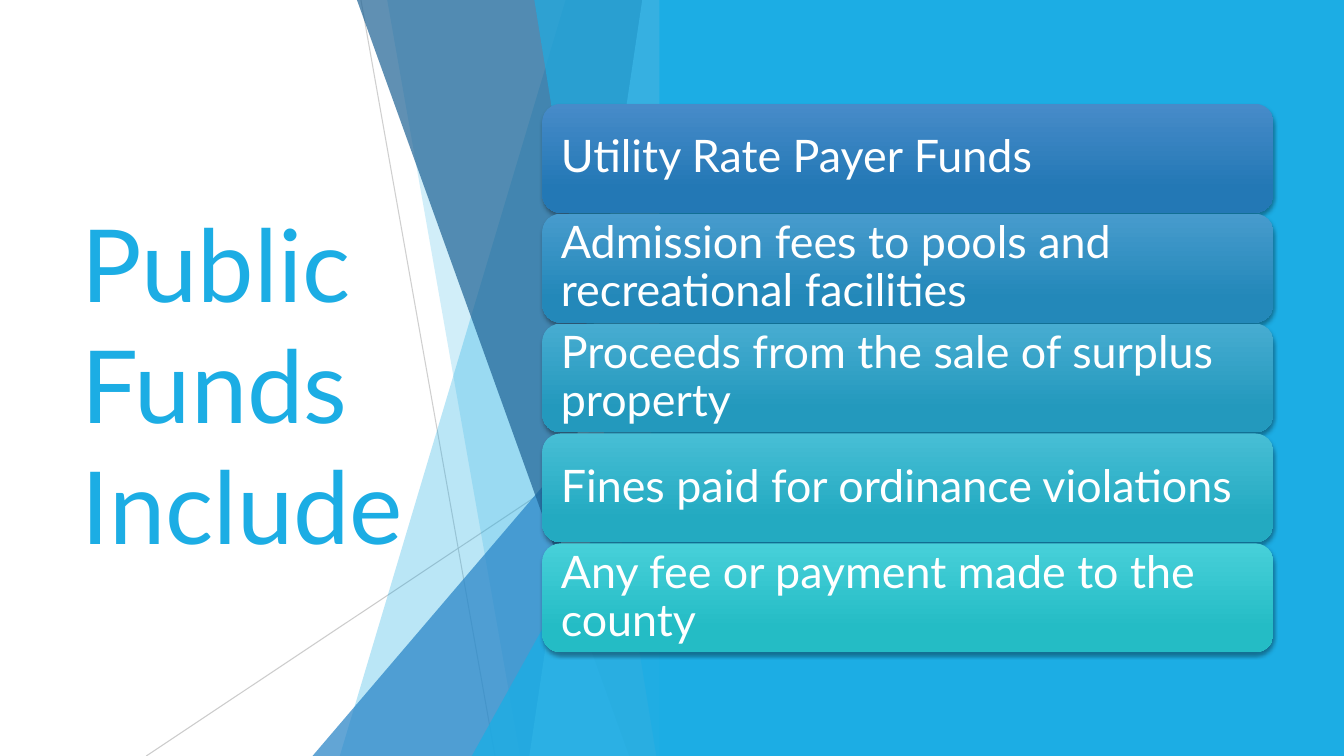
"""Build the "Public Funds Include" slide: a title, faceted divider and five cards."""
import pptx
import pptx.util
import pptx.dml.color
import pptx.enum.shapes
import pptx.enum.text
import pptx.oxml.ns
from lxml import etree

Inches = pptx.util.Inches
Pt = pptx.util.Pt
RGBColor = pptx.dml.color.RGBColor
SHAPE = pptx.enum.shapes.MSO_SHAPE
qn = pptx.oxml.ns.qn

SKY = RGBColor(0x1C, 0xAD, 0xE4)
BLUE = RGBColor(0x26, 0x83, 0xC6)
NAVY = RGBColor(0x1D, 0x62, 0x94)
PALE = RGBColor(0x77, 0xCE, 0xEF)
SILVER = RGBColor(0xBF, 0xBF, 0xBF)
WHITE = RGBColor(0xFF, 0xFF, 0xFF)

WIDTH, HEIGHT = 13.33, 7.5
FACET_RIGHT = 6.66
PANEL_LEFT = 6.54
CARD_LEFT, CARD_TOP, CARD_WIDTH, CARD_HEIGHT = 5.38, 1.03, 7.25, 1.08
CARD_PITCH = 1.09


def fade(part, percent):
    """Set the opacity of every colour in a shape or line."""
    for colour in part._element.spPr.iter(qn("a:srgbClr")):
        etree.SubElement(colour, qn("a:alpha"), val=str(percent * 1000))


def write(frame, text, size, colour, frame_format, line_spacing):
    """Fill a text frame with one left-aligned, vertically centred paragraph."""
    frame.text = text
    for name, value in frame_format.items():
        setattr(frame, name, value)
    paragraph = frame.paragraphs[0]
    paragraph.alignment = pptx.enum.text.PP_ALIGN.LEFT
    paragraph.line_spacing = line_spacing
    font = paragraph.runs[0].font
    for name, value in {"name": "Lato", "size": Pt(size)}.items():
        setattr(font, name, value)
    font.color.rgb = colour


deck = pptx.Presentation()
deck.slide_width, deck.slide_height = Inches(WIDTH), Inches(HEIGHT)
slide = deck.slides.add_slide(deck.slide_layouts[5])
shapes = slide.shapes

middle = {
    "word_wrap": True,
    "auto_size": pptx.enum.text.MSO_AUTO_SIZE.NONE,
    "vertical_anchor": pptx.enum.text.MSO_ANCHOR.MIDDLE,
}
title = shapes.title
for name, value in {"left": 0.71, "top": 0.72, "width": 3.88, "height": 6.17}.items():
    setattr(title, name, Inches(value))
write(title.text_frame, "Public Funds Include", 72, SKY, middle, 1.0)

for x1, y1, x2, y2, opacity in [(3.58, 0, 4.91, HEIGHT, 75), (FACET_RIGHT, 4.03, 1.45, HEIGHT, 80)]:
    ray = shapes.add_connector(
        pptx.enum.shapes.MSO_CONNECTOR.STRAIGHT, *map(Inches, (x1, y1, x2, y2)))
    ray.line.color.rgb = SILVER
    ray.line.width = Pt(0.75)
    fade(ray, opacity)
    etree.SubElement(ray._element.spPr, qn("a:effectLst"))

facets = [
    (5.61, 3.37, 0, SKY, 30),
    (3.84, 5.16, 0, SKY, 20),
    (FACET_RIGHT, 3.1, 3.33, BLUE, 72),
    (3.54, 6.24, 0, NAVY, 70),
    (6.37, 5.25, 0, PALE, 70),
    (5.3, 6.51, 0, SKY, 65),
    (FACET_RIGHT, 4.68, 3.93, SKY, 80),
]
for top_x, bottom_x, top_y, colour, opacity in facets:
    if top_x == FACET_RIGHT:
        facet = shapes.add_shape(
            SHAPE.ISOSCELES_TRIANGLE,
            *map(Inches, (bottom_x, top_y, FACET_RIGHT - bottom_x, HEIGHT - top_y)))
        facet.adjustments[0] = 1
    else:
        outline = shapes.build_freeform(Inches(top_x), Inches(top_y))
        corners = [(FACET_RIGHT, top_y), (FACET_RIGHT, HEIGHT), (bottom_x, HEIGHT)]
        outline.add_line_segments([(Inches(x), Inches(y)) for x, y in corners])
        facet = outline.convert_to_shape()
    facet.fill.solid()
    facet.fill.fore_color.rgb = colour
    facet.line.fill.background()
    facet.shadow.inherit = False
    fade(facet, opacity)

panel = shapes.add_shape(
    SHAPE.RECTANGLE, *map(Inches, (PANEL_LEFT, 0, WIDTH - PANEL_LEFT, HEIGHT)))
panel.fill.solid()
panel.fill.fore_color.rgb = SKY
panel.line.fill.background()
panel.shadow.inherit = False

funds = [
    ("Utility Rate Payer Funds", RGBColor(0x47, 0x8B, 0xC9), RGBColor(0x23, 0x78, 0xB5)),
    ("Admission fees to pools and recreational facilities",
     RGBColor(0x47, 0x9B, 0xCD), RGBColor(0x23, 0x88, 0xB9)),
    ("Proceeds from the sale of surplus property",
     RGBColor(0x47, 0xAC, 0xD1), RGBColor(0x23, 0x99, 0xBD)),
    ("Fines paid for ordinance violations",
     RGBColor(0x47, 0xBE, 0xD5), RGBColor(0x23, 0xAA, 0xC1)),
    ("Any fee or payment made to the county",
     RGBColor(0x47, 0xD0, 0xD9), RGBColor(0x24, 0xBC, 0xC5)),
]
margins = {f"margin_{side}": Inches(0.13) for side in ("left", "top", "right", "bottom")}
for row, (fund, upper, lower) in enumerate(funds):
    card = shapes.add_shape(
        SHAPE.ROUNDED_RECTANGLE,
        *map(Inches, (CARD_LEFT, CARD_TOP + row * CARD_PITCH, CARD_WIDTH, CARD_HEIGHT)))
    card.fill.gradient()
    card.fill.gradient_angle = 270
    for stop, colour, position in zip(card.fill.gradient_stops, (upper, lower), (0, 0.78)):
        stop.color.rgb = colour
        stop.position = position
    card.line.fill.background()
    card.shadow.inherit = False
    shadow = etree.SubElement(
        card._element.spPr.find(qn("a:effectLst")), qn("a:outerShdw"),
        blurRad=str(Pt(3)), dist=str(Pt(2)), dir="5400000", rotWithShape="0")
    shade = etree.SubElement(shadow, qn("a:srgbClr"), val="000000")
    etree.SubElement(shade, qn("a:alpha"), val="35000")
    write(card.text_frame, fund, 32, WHITE, {**middle, **margins}, 0.9)

deck.save("out.pptx")
